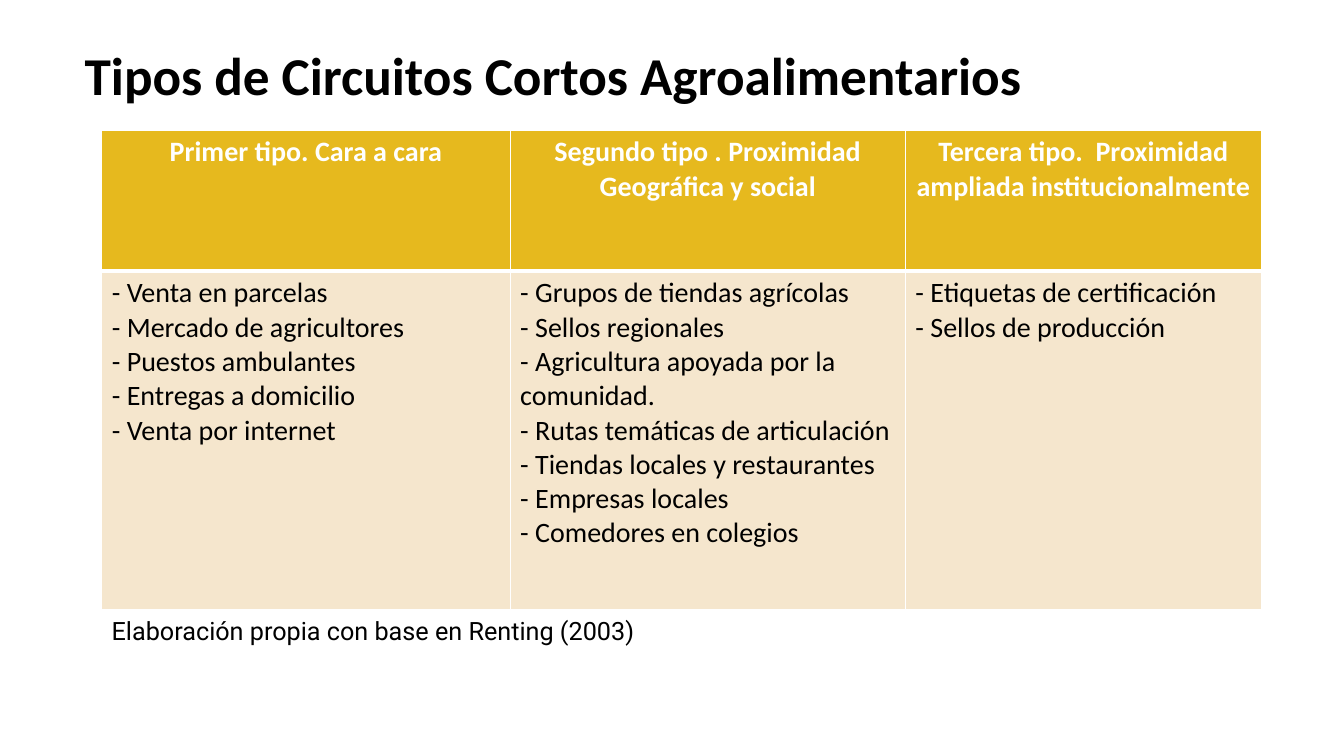
from pptx import Presentation
from pptx.dml.color import RGBColor
from pptx.enum.text import MSO_ANCHOR, MSO_AUTO_SIZE, PP_ALIGN
from pptx.oxml.ns import qn
from pptx.util import Pt
from lxml.etree import SubElement

SCALE = 9144
BLACK, WHITE, GOLD, CREAM = "000000", "FFFFFF", "E6B91E", "F5E6CD"
HEADS = [
    "Primer tipo. Cara a cara",
    "Segundo tipo . Proximidad Geográfica y social",
    "Tercera tipo.  Proximidad ampliada institucionalmente",
]
LISTS = [
    ["Venta en parcelas", "Mercado de agricultores", "Puestos ambulantes",
     "Entregas a domicilio", "Venta por internet"],
    ["Grupos de tiendas agrícolas", "Sellos regionales",
     "Agricultura apoyada por la comunidad.",
     "Rutas temáticas de articulación", "Tiendas locales y restaurantes",
     "Empresas locales", "Comedores en colegios"],
    ["Etiquetas de certificación", "Sellos de producción"],
]


def px(num):
    return num * SCALE


def paint(text):
    return RGBColor.from_string(text)


class Deck:
    """Holds the style and the current slide."""

    def __init__(self, width, height):
        self.show = Presentation()
        self.show.slide_width, self.show.slide_height = px(width), px(height)
        self.slide = self.show.slides.add_slide(self.show.slide_layouts[6])
        self.font = "Calibri"

    def style(self, frame, size, color, bold=False, align=PP_ALIGN.LEFT, font=None):
        for para in frame.paragraphs:
            para.alignment = align
            for run in para.runs:
                run.font.name = font or self.font
                run.font.size = Pt(size)
                run.font.bold = bold
                run.font.color.rgb = paint(color)

    def text(self, box, words, size, **look):
        frame = self.slide.shapes.add_textbox(*map(px, box)).text_frame
        frame.word_wrap = True
        frame.text = words
        self.style(frame, size, BLACK, **look)
        return frame

    def edge(self, cell, widths):
        props = cell._tc.get_or_add_tcPr()
        for side, width in zip("LRTB", widths):
            line = SubElement(props, qn(f"a:ln{side}"), w=str(Pt(width)))
            fill = SubElement(line, qn("a:solidFill"))
            SubElement(fill, qn("a:srgbClr"), val=WHITE)

    def cell(self, cell, words, fill, widths, color, **look):
        cell.text_frame.text = words
        self.style(cell.text_frame, 20, color, **look)
        self.edge(cell, widths)
        cell.fill.solid()
        cell.fill.fore_color.rgb = paint(fill)

    def table(self, left, top, cols, rows, heads, lists):
        box = map(px, (left, top, sum(cols), sum(rows)))
        grid = self.slide.shapes.add_table(len(rows), len(cols), *box).table
        grid.horz_banding = False
        for row, size in zip(grid.rows, rows):
            row.height = px(size)
        for num, (size, head, items) in enumerate(zip(cols, heads, lists)):
            grid.columns[num].width = px(size)
            self.cell(grid.cell(0, num), head, GOLD, (1, 1, 1, 3), WHITE,
                      bold=True, align=PP_ALIGN.CENTER)
            lines = "\n".join(f"- {item}" for item in items)
            self.cell(grid.cell(1, num), lines, CREAM, (1, 1, 3, 1), BLACK)


def main():
    deck = Deck(1333, 750)
    title = deck.text((61, 34, 976, 87), "Tipos de Circuitos Cortos Agroalimentarios",
                      38, bold=True, align=PP_ALIGN.CENTER)
    title.vertical_anchor = MSO_ANCHOR.MIDDLE
    title.paragraphs[0].line_spacing = 0.9
    deck.table(101, 129, (405, 392, 353), (140, 336), HEADS, LISTS)
    note = deck.text((101, 606, 1150, 40),
                     "Elaboración propia con base en Renting (2003)", 18, font="Roboto")
    note.auto_size = MSO_AUTO_SIZE.SHAPE_TO_FIT_TEXT
    deck.show.save("out.pptx")


if __name__ == "__main__":
    main()
